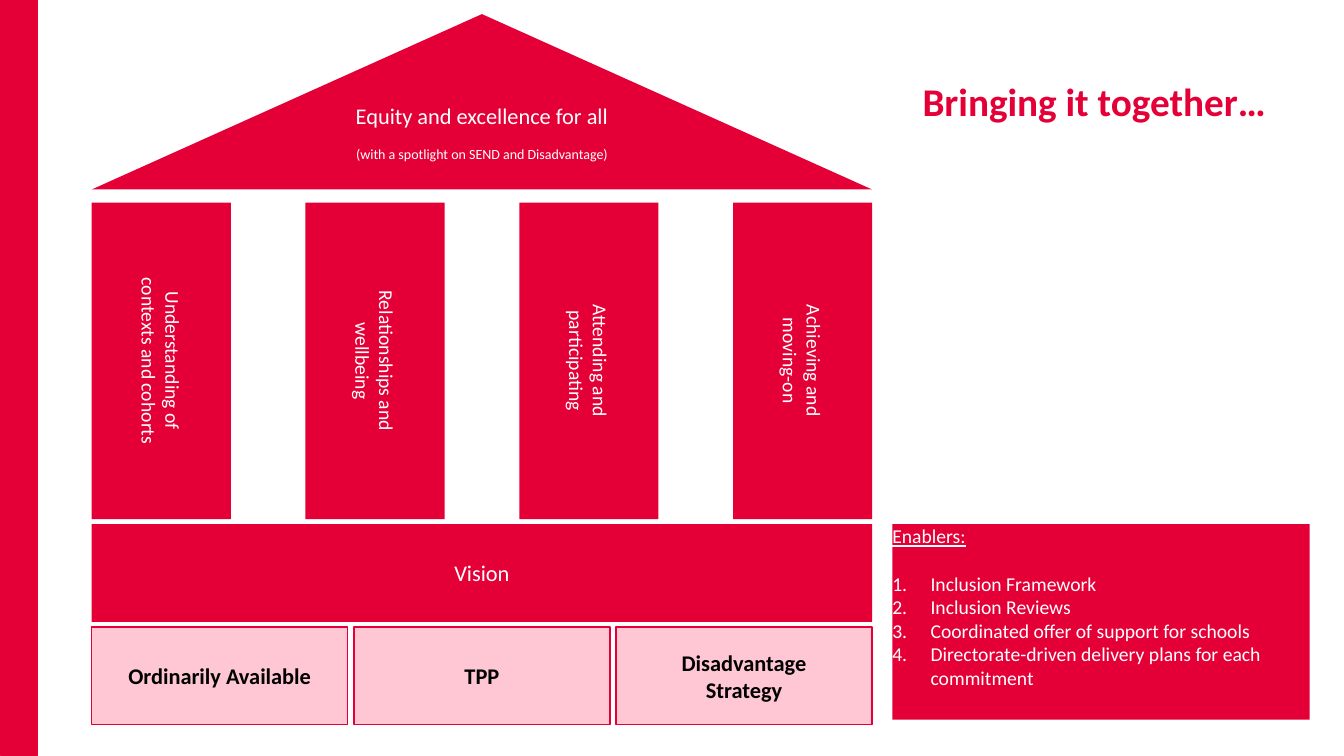
from pptx import Presentation
from pptx import util as u
from pptx.dml.color import RGBColor
from pptx.enum import shapes, text
from lxml import etree

TITLE = "Bringing it together…"
ROOF = ["Equity and excellence for all", "(with a spotlight on SEND and Disadvantage)"]
PILLARS = [
    ["Understanding of", "contexts and cohorts"],
    ["Relationships and", "wellbeing"],
    ["Attending and", "participating"],
    ["Achieving and", "moving-on"],
]
VISION = "Vision"
BASES = ["Ordinarily Available", "TPP", "Disadvantage Strategy"]
HEAD = "Enablers:"
ENABLERS = [
    "Inclusion Framework",
    "Inclusion Reviews",
    "Coordinated offer of support for schools",
    "Directorate-driven delivery plans for each commitment",
]

RED = RGBColor(0xE4, 0x00, 0x37)
PINK = RGBColor(0xFF, 0xC7, 0xD4)
WHITE = RGBColor(0xFF, 0xFF, 0xFF)
BLACK = RGBColor(0, 0, 0)
FONT = "Calibri"

# Grid in inches
WIDE, HIGH = 13.33, 7.5
LEFT, SPAN = 0.91, 7.74
ROOF_ROW, PILLAR_ROW = (0.14, 1.74), (2.01, 3.14)
VISION_ROW, BASE_ROW = (5.2, 0.97), (6.22, 0.97)
PILLAR_W, BASE_W = 1.38, 2.54
BASE_PAD = 0.31
SIDE, SIDE_W = 8.85, 4.14
INDENT = 0.38

CENTER, START = text.PP_ALIGN.CENTER, text.PP_ALIGN.LEFT
MIDDLE, TOP = text.MSO_ANCHOR.MIDDLE, text.MSO_ANCHOR.TOP
RECT = shapes.MSO_SHAPE.RECTANGLE
ROOF_FORM = shapes.MSO_SHAPE.ISOSCELES_TRIANGLE


def columns(count, width):
    """Left edges of equal columns that fill the width of the house."""
    step = (SPAN - width) / (count - 1)
    return [LEFT + i * step for i in range(count)]


def inches(*box):
    return [u.Inches(n) for n in box]


def block(slide, box, form=RECT, fill=RED, line=None, weight=1):
    shape = slide.shapes.add_shape(form, *inches(*box))
    shape.shadow.inherit = False
    shape.fill.solid()
    shape.fill.fore_color.rgb = fill
    if line is None:
        shape.line.fill.background()
    else:
        shape.line.color.rgb = line
        shape.line.width = u.Pt(weight)
    return shape


def write(shape, lines, size=16, color=WHITE, bold=False, align=CENTER,
          anchor=MIDDLE, pad=0, wrap=True, turn=False):
    """Fill a shape with one paragraph a line and return the paragraphs."""
    frame = shape.text_frame
    frame.word_wrap = wrap
    frame.auto_size = text.MSO_AUTO_SIZE.NONE
    frame.vertical_anchor = anchor
    frame.margin_left = frame.margin_right = u.Inches(pad)
    frame.margin_top = frame.margin_bottom = 0
    if turn:
        frame._txBody.bodyPr.set("vert", "vert")
    frame.text = "\n".join(lines)
    for para in frame.paragraphs:
        para.alignment = align
        for run in para.runs:
            font = run.font
            font.name, font.size, font.bold = FONT, u.Pt(size), bold
            font.color.rgb = color
    return frame.paragraphs


def number(para):
    props = para._p.get_or_add_pPr()
    props.set("marL", str(u.Inches(INDENT)))
    props.set("indent", str(-u.Inches(INDENT)))
    space = props.nsmap["a"]
    etree.SubElement(props, f"{{{space}}}buAutoNum", type="arabicPeriod")


def house(slide):
    top, high = ROOF_ROW
    block(slide, (LEFT, top, SPAN, high), form=ROOF_FORM)
    label = slide.shapes.add_textbox(*inches(LEFT, 1.01, SPAN, 0.61))
    main, note = write(label, ROOF, wrap=False)
    note.space_before = u.Pt(12)
    note.runs[0].font.size = u.Pt(10)

    top, high = PILLAR_ROW
    for x, lines in zip(columns(len(PILLARS), PILLAR_W), PILLARS):
        write(block(slide, (x, top, PILLAR_W, high)), lines, size=14, turn=True)

    top, high = VISION_ROW
    write(block(slide, (LEFT, top, SPAN, high)), [VISION])

    top, high = BASE_ROW
    for x, name in zip(columns(len(BASES), BASE_W), BASES):
        base = block(slide, (x, top, BASE_W, high), fill=PINK, line=RED)
        write(base, [name], color=BLACK, bold=True, pad=BASE_PAD)


def enablers(slide):
    panel = block(slide, (SIDE, VISION_ROW[0], SIDE_W, 1.94))
    head, *items = write(panel, [HEAD] + ENABLERS, size=14, align=START, anchor=TOP)
    head.runs[0].font.underline = True
    head.space_after = u.Pt(17)
    for item in items:
        number(item)


def main():
    deck = Presentation()
    deck.slide_width, deck.slide_height = inches(WIDE, HIGH)
    slide = deck.slides.add_slide(deck.slide_layouts[5])
    title = slide.shapes.title
    title.left, title.top, title.width, title.height = inches(9.15, 0.77, 3.7, 2.48)
    write(title, [TITLE], size=28, color=RED, bold=True, align=START, anchor=TOP)
    house(slide)
    enablers(slide)
    block(slide, (0.01, 0, 0.36, HIGH), line=RED, weight=0.75)
    deck.save("out.pptx")


if __name__ == "__main__":
    main()
